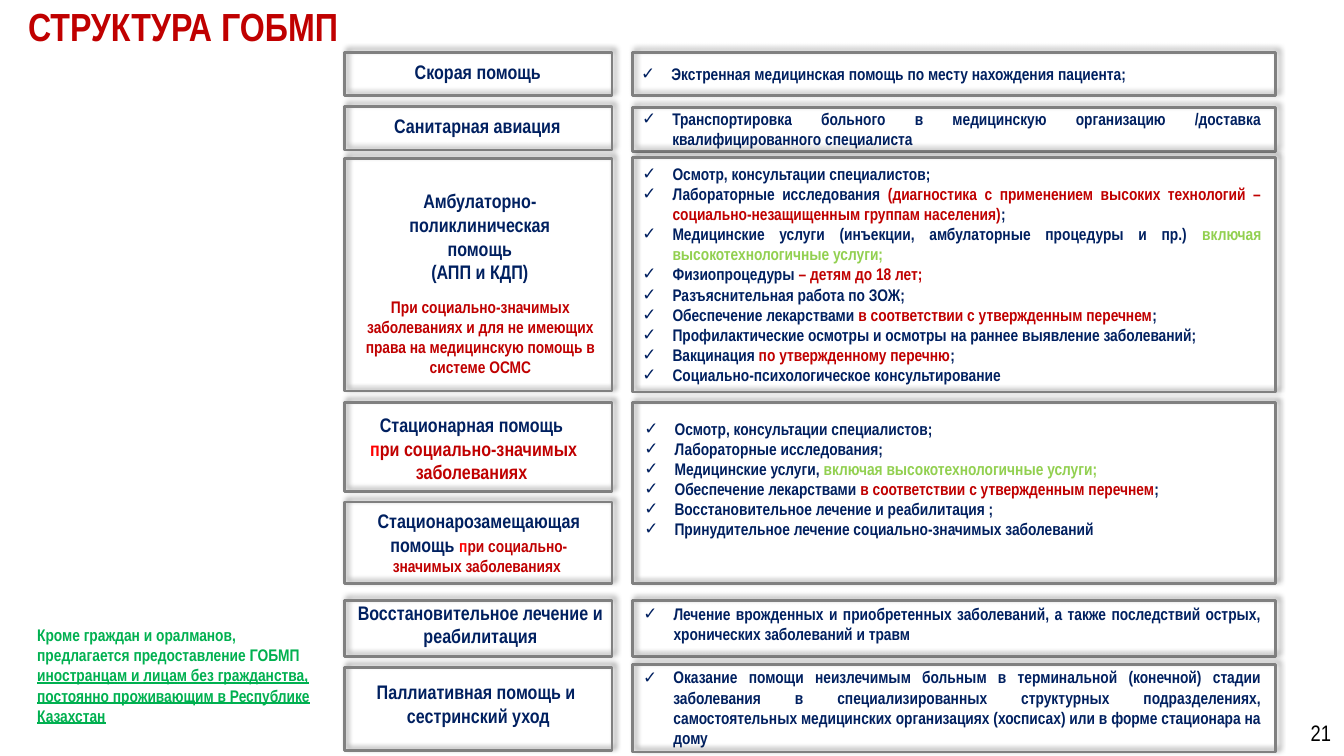
from dataclasses import dataclass
from typing import NamedTuple

from lxml.etree import SubElement
from pptx import Presentation
from pptx.dml.color import RGBColor
from pptx.enum.shapes import MSO_SHAPE
from pptx.enum.text import MSO_ANCHOR, MSO_AUTO_SIZE, PP_ALIGN
from pptx.oxml.ns import qn
from pptx.util import Inches, Pt


@dataclass(frozen=True)
class Theme:
    font: str = "Arial Narrow"
    navy: str = "002060"
    red: str = "C00000"
    bright: str = "FF0000"
    lime: str = "92D050"
    green: str = "00B050"
    black: str = "000000"
    frame: str = "808080"
    title: int = 28
    number: int = 16
    label: int = 14
    item: int = 12


T = Theme()
LEFT, CENTER, RIGHT, JUSTIFY = PP_ALIGN.LEFT, PP_ALIGN.CENTER, PP_ALIGN.RIGHT, PP_ALIGN.JUSTIFY


class Box(NamedTuple):
    x: float
    y: float
    w: float
    h: float


class Run(NamedTuple):
    text: str
    color: str = T.navy
    size: int | None = None
    underline: bool = False


class Label(NamedTuple):
    box: Box
    paragraphs: list[list[Run]]
    size: int = T.label


class CheckList(NamedTuple):
    box: Box
    items: list[list[Run]]
    align: PP_ALIGN = JUSTIFY
    last_align: PP_ALIGN = JUSTIFY


def write(sp, paragraphs: list[list[Run]], *, size: int, align=LEFT, last_align=None,
          bold: bool = True, check: bool = False, anchor=MSO_ANCHOR.TOP, spacing: float = 1.0):
    """Fill a shape with formatted paragraphs, check-marked if asked."""
    tf = sp.text_frame
    tf.word_wrap, tf.auto_size, tf.vertical_anchor = True, MSO_AUTO_SIZE.NONE, anchor
    tf.margin_left = tf.margin_right = Inches(0.1)
    tf.margin_top = tf.margin_bottom = Inches(0.05)
    for i, runs in enumerate(paragraphs):
        p = tf.add_paragraph() if i else tf.paragraphs[0]
        p.alignment = last_align if last_align and i == len(paragraphs) - 1 else align
        p.line_spacing, p.space_before, p.space_after = spacing, Pt(0), Pt(0)
        if check:
            pPr = p._p.get_or_add_pPr()
            pPr.set("marL", str(Inches(0.3)))
            pPr.set("indent", str(-Inches(0.3)))
            SubElement(pPr, qn("a:buFont"), typeface="Arial")
            SubElement(pPr, qn("a:buChar"), char="✓")
        for run in runs:
            r = p.add_run()
            r.text = run.text
            f = r.font
            f.name, f.size, f.bold = T.font, Pt(run.size or size), bold
            f.color.rgb = RGBColor.from_string(run.color)
            if run.underline:
                f.underline = True


def place(sp, box: Box):
    sp.left, sp.top, sp.width, sp.height = map(Inches, box)
    return sp


def add_text(s, box: Box):
    return s.shapes.add_textbox(*map(Inches, box))


def add_frame(s, box: Box):
    """Unfilled grey frame with a soft shadow towards the upper right."""
    sp = s.shapes.add_shape(MSO_SHAPE.RECTANGLE, *map(Inches, box))
    sp.fill.background()
    sp.line.color.rgb = RGBColor.from_string(T.frame)
    sp.line.width = Pt(2)
    sp.shadow.inherit = False
    effects = sp._element.spPr.find(qn("a:effectLst"))
    shadow = SubElement(effects, qn("a:outerShdw"), blurRad=str(Pt(4)), dist=str(Pt(3)),
                        dir=str(315 * 60000), algn="bl", rotWithShape="0")
    color = SubElement(shadow, qn("a:srgbClr"), val=T.black)
    SubElement(color, qn("a:alpha"), val="40000")


# Kinds of care, left column
LABELS = [
    Label(Box(3.66, 0.55, 2.16, 0.33), [[Run("Скорая помощь")]]),
    Label(Box(3.49, 1.08, 2.49, 0.33), [[Run("Санитарная авиация")]]),
    Label(Box(3.68, 1.83, 2.16, 1.03),
          [[Run("Амбулаторно-поликлиническая помощь")], [Run("(АПП и КДП)")]]),
    Label(Box(3.52, 2.89, 2.49, 0.91),
          [[Run("При социально-значимых заболеваниях и для не имеющих права "
                "на медицинскую помощь в системе ОСМС", T.red)]], T.item),
    Label(Box(3.42, 4.05, 2.56, 0.8),
          [[Run("Стационарная помощь ")],
           [Run("п", T.bright), Run("ри социально-значимых заболеваниях ", T.red)]]),
    Label(Box(3.45, 5, 2.6, 0.77),
          [[Run("Стационарозамещающая помощь "), Run("п", T.bright, T.item),
            Run("ри социально-значимых заболеваниях ", T.red, T.item)]]),
    Label(Box(3.45, 5.91, 2.63, 0.56), [[Run("Восстановительное лечение и реабилитация")]]),
    Label(Box(3.45, 6.7, 2.59, 0.56),
          [[Run("Паллиативная помощь и ")], [Run("сестринский уход")]]),
]

# Services, right column
EXAMINATION = [Run("Осмотр, консультации специалистов;")]
MEDICINES = [Run("Обеспечение лекарствами "),
             Run("в соответствии с утвержденным перечнем", T.red), Run(";")]
HIGH_TECH = Run("включая высокотехнологичные услуги;", T.lime)
LISTS = [
    CheckList(Box(6.26, 0.58, 5.84, 0.3),
              [[Run("Экстренная медицинская помощь по месту нахождения пациента;")]], LEFT, LEFT),
    CheckList(Box(6.27, 1.57, 6.34, 2.32), [
        EXAMINATION,
        [Run("Лабораторные исследования "),
         Run("(диагностика с применением высоких технологий – социально-незащищенным "
             "группам населения)", T.red), Run(";")],
        [Run("Медицинские услуги (инъекции, амбулаторные процедуры и пр.) "), HIGH_TECH],
        [Run("Физиопроцедуры "), Run("– детям до 18 лет;", T.red)],
        [Run("Разъяснительная работа по ЗОЖ;")],
        MEDICINES,
        [Run("Профилактические осмотры и осмотры на раннее выявление заболеваний;")],
        [Run("Вакцинация "), Run("по утвержденному перечню", T.red), Run(";")],
        [Run("Социально-психологическое консультирование")],
    ], last_align=LEFT),
    CheckList(Box(6.29, 4.1, 6.19, 1.31), [
        EXAMINATION,
        [Run("Лабораторные исследования;")],
        [Run("Медицинские услуги, "), HIGH_TECH],
        MEDICINES,
        [Run("Восстановительное лечение и реабилитация ;")],
        [Run("Принудительное лечение социально-значимых заболеваний")],
    ], LEFT, LEFT),
    CheckList(Box(6.28, 5.94, 6.33, 0.5),
              [[Run("Лечение врожденных и приобретенных заболеваний, а также последствий "
                    "острых, хронических заболеваний и травм")]]),
    CheckList(Box(6.28, 6.57, 6.33, 0.9),
              [[Run("Оказание помощи неизлечимым больным в терминальной (конечной) стадии "
                    "заболевания в специализированных структурных подразделениях, "
                    "самостоятельных медицинских организациях (хосписах) или в форме "
                    "стационара на дому")]]),
    CheckList(Box(6.27, 1.03, 6.34, 0.5),
              [[Run("Транспортировка больного в медицинскую организацию /доставка "
                    "квалифицированного специалиста")]]),
]

# Frames of each column as (top, height)
LEFT_FRAMES = [(0.52, 0.43), (1.06, 0.43), (1.57, 2.31), (3.99, 0.89), (4.98, 0.81),
               (5.96, 0.55), (6.62, 0.83)]
RIGHT_FRAMES = [(0.52, 0.43), (1.07, 0.43), (1.56, 2.33), (3.99, 1.8), (5.96, 0.55),
                (6.59, 0.87)]


def main():
    prs = Presentation()
    prs.slide_width, prs.slide_height = Inches(13.33), Inches(7.5)
    s = prs.slides.add_slide(prs.slide_layouts.get_by_name("Comparison"))

    # Title
    write(place(s.shapes.title, Box(0.18, 0.06, 8.74, 0.48)),
          [[Run("СТРУКТУРА ГОБМП", T.red)]], size=T.title, spacing=0.8)

    # Lists take the body placeholders first, then text boxes
    bodies = iter([ph for ph in s.placeholders if ph.placeholder_format.idx])
    for item in LISTS:
        body = next(bodies, None)
        sp = add_text(s, item.box) if body is None else place(body, item.box)
        write(sp, item.items, size=T.item, align=item.align, last_align=item.last_align,
              check=True)

    # Labels and frames
    for label in LABELS:
        write(add_text(s, label.box), label.paragraphs, size=label.size, align=CENTER)
    for x, w, frames in ((3.42, 2.65, LEFT_FRAMES), (6.27, 6.38, RIGHT_FRAMES)):
        for top, height in frames:
            add_frame(s, Box(x, top, w, height))

    # Side note and page number
    write(add_text(s, Box(0.27, 6.15, 2.98, 1.11)),
          [[Run("Кроме граждан и оралманов, предлагается предоставление ГОБМП ", T.green),
            Run("иностранцам и лицам без гражданства, постоянно проживающим в Республике "
                "Казахстан", T.green, underline=True)]], size=T.item)
    write(add_text(s, Box(10.3, 7.07, 3, 0.4)), [[Run("21", T.black)]],
          size=T.number, align=RIGHT, bold=False, anchor=MSO_ANCHOR.MIDDLE)

    prs.save("out.pptx")


if __name__ == "__main__":
    main()
